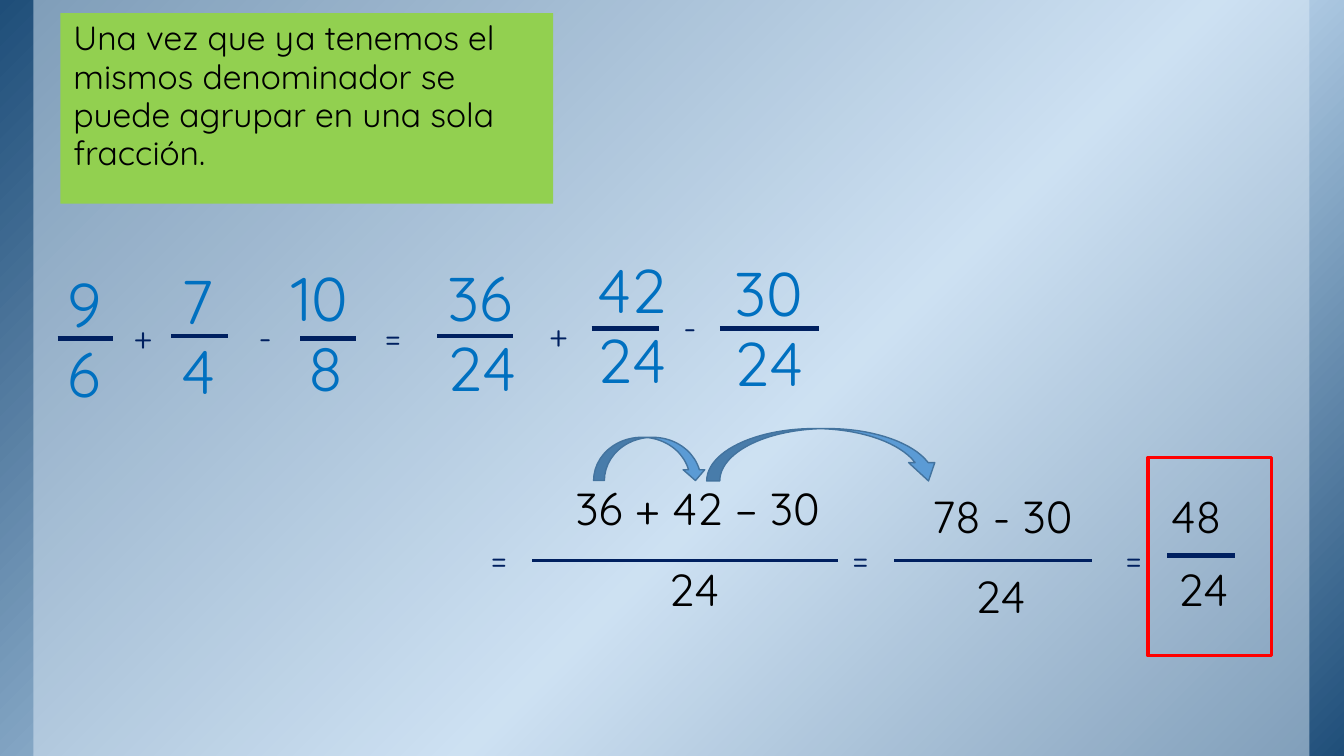
from lxml.etree import SubElement
from pptx import Presentation
from pptx.dml.color import RGBColor
from pptx.enum.shapes import MSO_CONNECTOR, MSO_SHAPE
from pptx.enum.text import MSO_ANCHOR, MSO_AUTO_SIZE, PP_ALIGN
from pptx.oxml.ns import qn
from pptx.util import Cm, Pt

FONT = "Quicksand"
BLACK, NAVY, BLUE, RED = "000000", "002060", "0070C0", "FF0000"
SLIDE_WIDTH, SLIDE_HEIGHT = 33.87, 19.05

# Left, top, width, numerator, denominator
FRACTIONS = [
    (1.45, 6.71, 1.4, "9", "6"),
    (4.32, 6.63, 1.4, "7", "4"),
    (7.09, 6.55, 2.36, "10", " 8"),
    (11.02, 6.55, 2.39, "36", "24"),
    (14.81, 6.35, 2.39, "42", "24"),
    (18.26, 6.43, 2.39, "30", "24"),
]
# Left, right, height on the slide, line width
BARS = [
    (1.45, 2.84, 8.53, 3),
    (4.32, 5.74, 8.46, 3),
    (7.57, 8.97, 8.53, 3),
    (11.02, 12.93, 8.46, 3),
    (14.91, 16.61, 8.28, 3),
    (18.14, 20.65, 8.28, 3),
    (13.41, 21.13, 14.12, 2.25),
    (22.53, 27.53, 14.12, 2.25),
    (29.41, 31.12, 14, 3),
]
# Left, top, sign
SIGNS = [
    (3.12, 7.9, "+"),
    (6.27, 7.9, "-"),
    (9.45, 7.92, "="),
    (13.59, 7.85, "+"),
    (16.97, 7.67, "-"),
    (12.12, 13.51, "="),
    (21.23, 13.51, "="),
    (28.12, 13.51, "="),
]
# Left, top, width, text
RESULT_TERMS = [
    (14.25, 12.09, 7.8, "36 + 42 – 30"),
    (16.61, 14.12, 2.39, "24"),
    (23.24, 12.29, 4.6, "78 - 30"),
    (24.33, 14.3, 2.39, "24"),
    (29.26, 12.29, 2.08, "48"),
    (29.44, 14.12, 2.39, "24"),
]


def color(hex_value):
    return RGBColor.from_string(hex_value)


def write_lines(text_frame, lines, size, hex_value):
    text_frame.word_wrap = True
    text_frame.vertical_anchor = MSO_ANCHOR.TOP
    for index, line in enumerate(lines):
        paragraph = text_frame.paragraphs[0] if index == 0 else text_frame.add_paragraph()
        paragraph.alignment = PP_ALIGN.LEFT
        paragraph.line_spacing = 0.95
        run = paragraph.add_run()
        run.text = line
        run.font.name = FONT
        run.font.size = Pt(size)
        run.font.color.rgb = color(hex_value)


def add_text(slide, left, top, width, height, lines, size, hex_value):
    box = slide.shapes.add_textbox(Cm(left), Cm(top), Cm(width), Cm(height))
    box.text_frame.auto_size = MSO_AUTO_SIZE.SHAPE_TO_FIT_TEXT
    write_lines(box.text_frame, lines, size, hex_value)


def add_shape(slide, kind, left, top, width, height, fill=None, line=None, line_width=1):
    shape = slide.shapes.add_shape(kind, Cm(left), Cm(top), Cm(width), Cm(height))
    shape.shadow.inherit = False
    if fill:
        shape.fill.solid()
        shape.fill.fore_color.rgb = color(fill)
    else:
        shape.fill.background()
    if line:
        shape.line.color.rgb = color(line)
        shape.line.width = Pt(line_width)
    else:
        shape.line.fill.background()
    return shape


def add_bar(slide, left, right, top, width):
    bar = slide.shapes.add_connector(
        MSO_CONNECTOR.STRAIGHT, Cm(left), Cm(top), Cm(right), Cm(top))
    bar.line.color.rgb = color(NAVY)
    bar.line.width = Pt(width)
    SubElement(bar._element.spPr, qn("a:effectLst"))


def add_background(slide):
    # Diagonal gradient, dark at both corners
    backdrop = add_shape(slide, MSO_SHAPE.RECTANGLE, 0, 0, SLIDE_WIDTH, SLIDE_HEIGHT)
    backdrop.fill.gradient()
    backdrop.fill.gradient_angle = 315
    stops = backdrop._element.spPr.find(qn("a:gradFill")).find(qn("a:gsLst"))
    for stop in list(stops):
        stops.remove(stop)
    for percent, hex_value in ((0, "1F4E79"), (58, "BDD7EE"), (100, "1F4E79")):
        stop = SubElement(stops, qn("a:gs"), pos=str(percent * 1000))
        SubElement(stop, qn("a:srgbClr"), val=hex_value)

    # Half-transparent panel
    panel = add_shape(slide, MSO_SHAPE.RECTANGLE, 0.84, 0, 32.16, SLIDE_HEIGHT, "DEEBF7")
    panel_color = panel._element.spPr.find(qn("a:solidFill")).find(qn("a:srgbClr"))
    SubElement(panel_color, qn("a:alpha"), val="50000")


def add_explanation(slide):
    note = add_shape(slide, MSO_SHAPE.RECTANGLE, 1.52, 0.33, 12.42, 4.8, "92D050")
    frame = note.text_frame
    frame.margin_left = frame.margin_right = Cm(0.33)
    frame.margin_top = frame.margin_bottom = Cm(0.18)
    write_lines(frame, ["Una vez que ya tenemos el mismos denominador se puede "
                        "agrupar en una sola fracción."], 24, BLACK)


def add_curved_arrow(slide, left, top, width, height):
    return add_shape(slide, MSO_SHAPE.CURVED_DOWN_ARROW, left, top, width, height,
                     "5B9BD5", "43739E")


def main():
    presentation = Presentation()
    presentation.slide_width = Cm(SLIDE_WIDTH)
    presentation.slide_height = Cm(SLIDE_HEIGHT)
    slide = presentation.slides.add_slide(presentation.slide_layouts[6])

    add_background(slide)
    add_explanation(slide)

    # Fractions, bars, signs and results
    for left, top, width, numerator, denominator in FRACTIONS:
        add_text(slide, left, top, width, 3.84, [numerator, denominator], 44, BLUE)
    for bar in BARS:
        add_bar(slide, *bar)
    for left, top, sign in SIGNS:
        add_text(slide, left, top, 1.04, 1.22, [sign], 24, NAVY)
    for left, top, width, term in RESULT_TERMS:
        add_text(slide, left, top, width, 1.55, [term], 32, BLACK)

    # Arrows between the terms
    add_curved_arrow(slide, 14.96, 11.02, 2.84, 1.09)
    long_arrow = add_curved_arrow(slide, 17.81, 10.8, 5.92, 1.32)
    long_arrow.adjustments[2] = 0.35

    # Frame around the final result
    add_shape(slide, MSO_SHAPE.RECTANGLE, 28.93, 11.53, 3.12, 5, line=RED, line_width=2.25)

    presentation.save("out.pptx")


if __name__ == "__main__":
    main()
